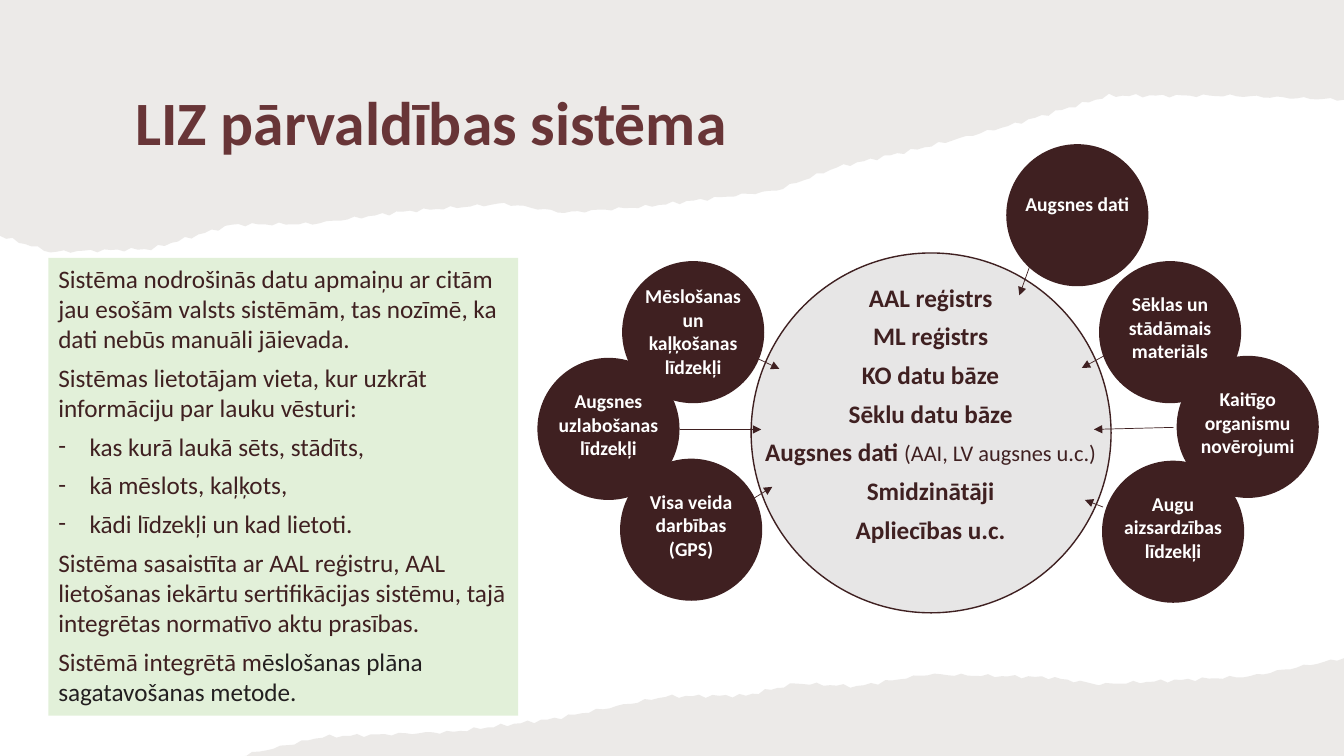
from collections import namedtuple
from itertools import pairwise
from math import ceil, sin

from lxml.etree import SubElement
from pptx import Presentation
from pptx.dml.color import RGBColor
from pptx.enum.shapes import MSO_CONNECTOR, MSO_SHAPE
from pptx.enum.text import MSO_ANCHOR, MSO_AUTO_SIZE, PP_ALIGN
from pptx.oxml.ns import qn
from pptx.util import Inches, Pt

# Grid of square cells; every length below is in columns and rows
COLUMNS, ROWS = 13.33, 7.5
CELL = Inches(1)
FONT = "Calibri"
COLORS = {
    "paper": "82766A", "title": "683537", "dark": "3F2021", "ink": "231F20",
    "green": "E2F0D9", "grey": "E7E6E6", "white": "FFFFFF",
}

# Torn paper: the bends of each edge, joined by short ragged steps
TEAR_STEP, TEAR_DEPTH = 0.07, 0.02
UPPER_BENDS = [(0, 2.34), (0.5, 2.5), (1.5, 2.47), (2.3, 2.23), (3.1, 2.22), (4, 2.1),
               (5, 2.02), (5.6, 2.11), (6.4, 2.05), (7.7, 1.89), (8.3, 1.66), (9.1, 1.48),
               (10, 1.25), (11, 0.95), (12.2, 0.95), (COLUMNS, 0.99)]
LOWER_BENDS = [(2.43, 7.49), (3.2, 7.31), (4.5, 7.26), (5.5, 7.13), (6.6, 6.91),
               (7.4, 6.9), (7.9, 6.78), (8.5, 6.81), (9.2, 6.69), (10.4, 6.72),
               (10.9, 6.79), (12.4, 6.71), (COLUMNS, 6.53)]

# Data sources: circles whose arrows point into the central system
CIRCLE = 1.41
LABEL_WIDTH = 1.25
LINE_HEIGHT = 0.235
LABEL_DROP = {1: 0.42, 3: 0.26, 4: 0.18}  # label top below circle top, by line count
Source = namedtuple("Source", "label left top lines arrow_from arrow_to")
SOURCES = [
    Source("Augsnes dati", 9.98, 1.43, 1, (10.21, 2.65), (10.11, 2.93)),
    Source("Sēklas un stādāmais materiāls", 10.9, 2.59, 3, (10.97, 3.52), (10.73, 3.65)),
    Source("Kaitīgo organismu novērojumi", 11.67, 3.53, 3, (11.64, 4.24), (10.85, 4.26)),
    Source("Augu aizsardzības līdzekļi", 10.93, 4.57, 3, (10.94, 5.03), (10.76, 4.96)),
    Source("Mēslošanas un kaļķošanas līdzekļi", 6.17, 2.59, 4, (7.5, 3.55), (7.73, 3.66)),
    Source("Visa veida darbības (GPS)", 6.15, 4.55, 3, (7.45, 4.96), (7.66, 4.83)),
    Source("Augsnes uzlabošanas līdzekļi", 5.33, 3.55, 3, (6.74, 4.26), (7.55, 4.26)),
]

# A paragraph is a string, or a list of (text, format changes)
REGISTERS = [
    "AAL reģistrs", "ML reģistrs", "KO datu bāze", "Sēklu datu bāze",
    [("Augsnes dati ", {}), ("(AAI, LV augsnes u.c.)", {"size": 16, "bold": False})],
    "Smidzinātāji", "Apliecības u.c.",
]
DESCRIPTION = [
    "Sistēma nodrošinās datu apmaiņu ar citām jau esošām valsts sistēmām, "
    "tas nozīmē, ka dati nebūs manuāli jāievada.",
    "Sistēmas lietotājam vieta, kur uzkrāt informāciju par lauku vēsturi:",
    "- kas kurā laukā sēts, stādīts,",
    "- kā mēslots, kaļķots,",
    "- kādi līdzekļi un kad lietoti.",
    "Sistēma sasaistīta ar AAL reģistru, AAL lietošanas iekārtu sertifikācijas "
    "sistēmu, tajā integrētas normatīvo aktu prasības.",
    [("Sistēmā integrētā m", {}),
     ("ēslošanas plāna sagatavošanas metode.", {"color": "ink"})],
]


def rgb(name):
    return RGBColor.from_string(COLORS[name])


def grid(*lengths):
    return [round(length * CELL) for length in lengths]


def add_dash(paragraph):
    properties = paragraph._p.get_or_add_pPr()
    properties.set("marL", str(Inches(0.31)))
    properties.set("indent", str(-Inches(0.31)))
    SubElement(properties, qn("a:buFont"), typeface=FONT)
    SubElement(properties, qn("a:buChar"), char="-")


def write(frame, paragraphs, size=18, color="dark", bold=False, align=PP_ALIGN.LEFT,
          anchor=MSO_ANCHOR.TOP, before=0, after=0, spacing=1.0):
    """Fill a text frame; a leading dash makes a list item."""
    frame.word_wrap = True
    frame.auto_size = MSO_AUTO_SIZE.NONE
    frame.vertical_anchor = anchor
    for index, content in enumerate(paragraphs):
        paragraph = frame.add_paragraph() if index else frame.paragraphs[0]
        paragraph.alignment = align
        paragraph.line_spacing = spacing
        paragraph.space_before = Pt(before if index else 0)
        paragraph.space_after = Pt(after)
        if isinstance(content, str):
            if content.startswith("- "):
                add_dash(paragraph)
            content = [(content.removeprefix("- "), {})]
        for text, changes in content:
            run = paragraph.add_run()
            run.text = text
            run.font.name = FONT
            run.font.size = Pt(changes.get("size", size))
            run.font.bold = changes.get("bold", bold)
            run.font.color.rgb = rgb(changes.get("color", color))


def paint(shape, fill, line=None):
    shape.shadow.inherit = False
    shape.fill.solid()
    shape.fill.fore_color.rgb = rgb(fill)
    if line:
        shape.line.color.rgb = rgb(line)
        shape.line.width = Pt(1)
    else:
        shape.line.fill.background()
    return shape


def tear(bends):
    """Join the bends by short steps that two waves make ragged."""
    edge = []
    for (x1, y1), (x2, y2) in pairwise(bends):
        steps = ceil((x2 - x1) / TEAR_STEP)
        for step in range(steps):
            x = x1 + (x2 - x1) * step / steps
            y = y1 + (y2 - y1) * step / steps
            edge.append((x, y + TEAR_DEPTH * sin(11 * x) * sin(37 * x)))
    return edge + bends[-1:]


def add_paper(slide, bends, base):
    """Draw a sheet between a torn edge and a base row of the slide."""
    outline = [(bends[0][0], base), *tear(bends), (COLUMNS, base)]
    start, *rest = [grid(x, y) for x, y in outline]
    builder = slide.shapes.build_freeform(*start)
    builder.add_line_segments(rest, close=True)
    paper = paint(builder.convert_to_shape(), "paper")
    tint = paper.fill._xPr.find(qn("a:solidFill"))[0]
    SubElement(tint, qn("a:alpha"), val="15000")
    return paper


def add_block(slide, kind, box, fill, line=None):
    return paint(slide.shapes.add_shape(kind, *grid(*box)), fill, line)


def add_label(slide, box, paragraphs, **style):
    label = slide.shapes.add_textbox(*grid(*box))
    write(label.text_frame, paragraphs, bold=True, align=PP_ALIGN.CENTER, **style)


def add_source(slide, source):
    add_block(slide, MSO_SHAPE.OVAL, (source.left, source.top, CIRCLE, CIRCLE), "dark")
    box = (source.left + (CIRCLE - LABEL_WIDTH) / 2, source.top + LABEL_DROP[source.lines],
           LABEL_WIDTH, 0.1 + LINE_HEIGHT * source.lines)
    add_label(slide, box, [source.label], size=14, color="white")


def add_arrow(slide, start, end):
    arrow = slide.shapes.add_connector(MSO_CONNECTOR.STRAIGHT, *grid(*start, *end))
    arrow.line.color.rgb = rgb("dark")
    arrow.line.width = Pt(0.5)
    SubElement(arrow.line._get_or_add_ln(), qn("a:tailEnd"), type="triangle")
    SubElement(arrow._element.spPr, qn("a:effectLst"))


def main():
    deck = Presentation()
    deck.slide_width, deck.slide_height = grid(COLUMNS, ROWS)
    slide = deck.slides.add_slide(deck.slide_layouts[5])

    # Torn paper, with the title above the upper sheet
    title = slide.shapes.title
    upper_paper = add_paper(slide, UPPER_BENDS, base=0)
    title._element.addprevious(upper_paper._element)
    title.left, title.top, title.width, title.height = grid(1.24, 0.6, 10.44, 1.3)
    write(title.text_frame, ["LIZ pārvaldības sistēma"], size=44, color="title",
          bold=True, anchor=MSO_ANCHOR.MIDDLE, after=6, spacing=0.9)
    add_paper(slide, LOWER_BENDS, base=ROWS)

    # Description
    description = add_block(slide, MSO_SHAPE.RECTANGLE, (0.48, 2.56, 4.66, 4.54), "green")
    write(description.text_frame, DESCRIPTION, before=6)

    # Data sources, the central system over them, and the arrows on top
    for source in SOURCES:
        add_source(slide, source)
    add_block(slide, MSO_SHAPE.OVAL, (7.45, 2.51, 3.57, 3.57), "grey", line="dark")
    add_label(slide, (7.29, 2.75, 3.88, 2.73), REGISTERS, before=6)
    for source in SOURCES:
        add_arrow(slide, source.arrow_from, source.arrow_to)

    deck.save("out.pptx")


if __name__ == "__main__":
    main()
